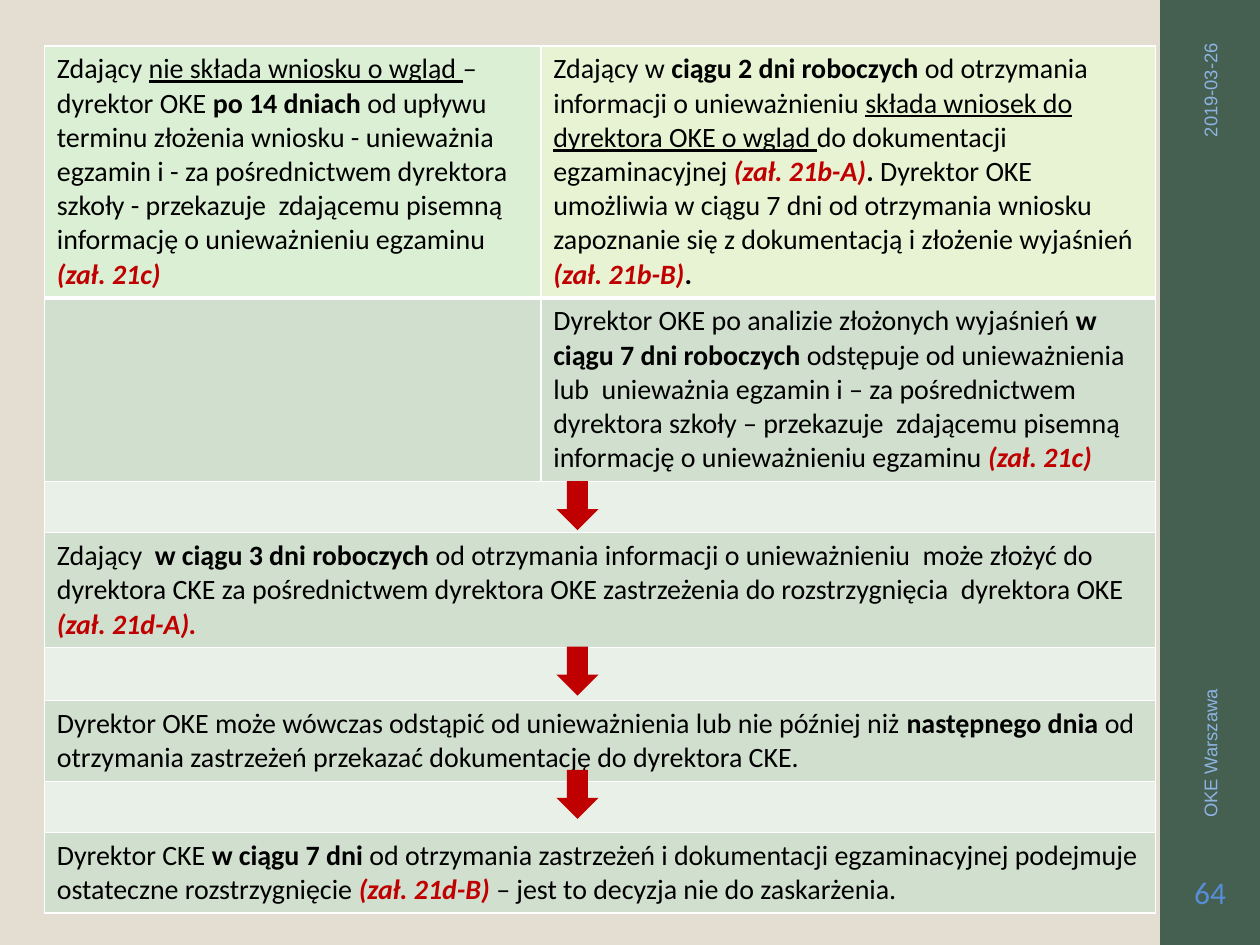
"""Build the slide on the exam invalidation procedure."""
from lxml.etree import SubElement
from pptx import Presentation
from pptx.dml.color import RGBColor as RGB
from pptx.enum.shapes import MSO_SHAPE as SHAPE
from pptx.enum.text import MSO_ANCHOR as ANCHOR, PP_ALIGN as ALIGN
from pptx.oxml.ns import qn
from pptx.util import Pt

SAND = RGB(0xE3, 0xDE, 0xD1)
PINE = RGB(0x45, 0x5F, 0x51)
SKY = RGB(0x8E, 0xB4, 0xE3)
BLUE = RGB(0x55, 0x8E, 0xD5)
RED = RGB(0xC0, 0x00, 0x00)
BLACK = RGB(0, 0, 0)
MINT = RGB(0xDB, 0xEF, 0xD4)
LIME = RGB(0xE8, 0xF3, 0xD4)
SAGE = RGB(0xD1, 0xDF, 0xCE)
PALE = RGB(0xE9, 0xF0, 0xE8)

NO_REQUEST = [
    ("Zdający ", ""), ("nie składa wniosku o wgląd ", "u"),
    ("– dyrektor OKE ", ""), ("po 14 dniach ", "b"),
    ("od upływu terminu złożenia wniosku - unieważnia egzamin i - za pośrednictwem "
     "dyrektora szkoły - przekazuje  zdającemu pisemną informację o unieważnieniu "
     "egzaminu ", ""),
    ("(zał. 21c)", "bir"),
]
REQUEST = [
    ("Zdający w ", ""), ("ciągu 2 dni roboczych ", "b"),
    ("od otrzymania informacji o unieważnieniu ", ""),
    ("składa wniosek do dyrektora OKE o wgląd ", "u"),
    ("do dokumentacji egzaminacyjnej ", ""), ("(zał. 21b-A)", "bir"), (". ", "b"),
    ("Dyrektor OKE umożliwia w ciągu 7 dni od otrzymania wniosku zapoznanie się "
     "z dokumentacją i złożenie wyjaśnień ", ""),
    ("(zał. 21b-B)", "bir"), (".", "b"),
]
REVIEW = [
    ("Dyrektor OKE po analizie złożonych wyjaśnień ", ""),
    ("w ciągu 7 dni roboczych", "b"),
    (" odstępuje od unieważnienia lub  unieważnia egzamin i – za pośrednictwem "
     "dyrektora szkoły – przekazuje  zdającemu pisemną informację o unieważnieniu "
     "egzaminu ", ""),
    ("(zał. 21c)", "bir"),
]
APPEAL = [
    ("Zdający  ", ""), ("w ciągu 3 dni roboczych", "b"),
    (" od otrzymania informacji o unieważnieniu  może złożyć do dyrektora CKE za "
     "pośrednictwem dyrektora OKE zastrzeżenia do rozstrzygnięcia  dyrektora OKE ", ""),
    ("(zał. 21d-A).", "bir"),
]
FORWARD = [
    ("Dyrektor OKE może wówczas odstąpić od unieważnienia lub nie później niż ", ""),
    ("następnego dnia ", "b"),
    ("od otrzymania zastrzeżeń przekazać dokumentację do dyrektora CKE.", ""),
]
RULING = [
    ("Dyrektor CKE ", ""), ("w ciągu 7 dni", "b"),
    (" od otrzymania zastrzeżeń i dokumentacji egzaminacyjnej podejmuje ostateczne "
     "rozstrzygnięcie ", ""),
    ("(zał. 21d-B)", "bir"), (" – jest to decyzja nie do zaskarżenia.", ""),
]
ROWS = [
    (144, [(NO_REQUEST, MINT), (REQUEST, LIME)]),
    (105, [([], SAGE), (REVIEW, SAGE)]),
    (29.2, [([], PALE)]),
    (65.7, [(APPEAL, SAGE)]),
    (30.2, [([], PALE)]),
    (46.2, [(FORWARD, SAGE)]),
    (29.2, [([], PALE)]),
    (46.2, [(RULING, SAGE)]),
]
COLS = [283.7, 351.3]
ARROWS = [275, 369.5, 440]
LABELS = [
    ("2019-03-26", (616.5, 82, 150, 21.6), 270, ALIGN.RIGHT, "Arial", 10.5, SKY),
    ("OKE Warszawa", (550.5, 322.5, 282, 21.6), 270, ALIGN.LEFT, "Arial", 10.5, SKY),
    ("64", (664.5, 486, 54, 46.8), 0, ALIGN.CENTER, "Calibri", 18, BLUE),
]


def write(para, text, face, size, color, marks=""):
    run = para.add_run()
    run.text = text
    font = run.font
    font.name, font.size = face, Pt(size)
    font.color.rgb = color
    font.bold, font.italic, font.underline = (m in marks for m in "biu")


def edge(cell, side, width):
    line = SubElement(cell._tc.get_or_add_tcPr(), qn("a:ln" + side), w=str(Pt(width)))
    fill = SubElement(line, qn("a:solidFill"))
    SubElement(fill, qn("a:srgbClr"), val="FFFFFF")


def block(slide, kind, place, color):
    shape = slide.shapes.add_shape(kind, *map(Pt, place))
    shape.shadow.inherit = False
    shape.fill.solid()
    shape.fill.fore_color.rgb = color
    shape.line.fill.background()


def add_steps(slide):
    total = sum(high for high, _ in ROWS)
    frame = slide.shapes.add_table(
        len(ROWS), len(COLS), Pt(25.3), Pt(26.2), Pt(sum(COLS)), Pt(total))
    table = frame.table
    table.first_row = table.horz_banding = False
    for col, wide in zip(table.columns, COLS):
        col.width = Pt(wide)
    for i, (high, cells) in enumerate(ROWS):
        table.rows[i].height = Pt(high)
        if len(cells) == 1:
            table.cell(i, 0).merge(table.cell(i, 1))
        for j in range(len(COLS)):
            cell = table.cell(i, j)
            for side in "LRTB":
                edge(cell, side, 3 if (i, side) in ((0, "B"), (1, "T")) else 1)
            runs, color = cells[min(j, len(cells) - 1)]
            cell.fill.solid()
            cell.fill.fore_color.rgb = color
            if not cell.is_spanned:
                for text, marks in runs:
                    write(cell.text_frame.paragraphs[0], text, "Calibri", 16,
                          RED if "r" in marks else BLACK, marks)


def add_label(slide, text, place, turn, align, face, size, color):
    box = slide.shapes.add_textbox(*map(Pt, place))
    box.rotation = turn
    frame = box.text_frame
    frame.word_wrap = True
    frame.vertical_anchor = ANCHOR.MIDDLE
    para = frame.paragraphs[0]
    para.alignment = align
    write(para, text, face, size, color)


def main():
    deck = Presentation()
    deck.slide_width, deck.slide_height = Pt(720), Pt(540)
    slide = deck.slides.add_slide(deck.slide_layouts[6])
    back = slide.background.fill
    back.solid()
    back.fore_color.rgb = SAND
    block(slide, SHAPE.RECTANGLE, (663, 0, 57, 540), PINE)
    for label in LABELS:
        add_label(slide, *label)
    add_steps(slide)
    for top in ARROWS:
        block(slide, SHAPE.DOWN_ARROW, (318, top, 24, 28), RED)
    deck.save("out.pptx")


if __name__ == "__main__":
    main()
